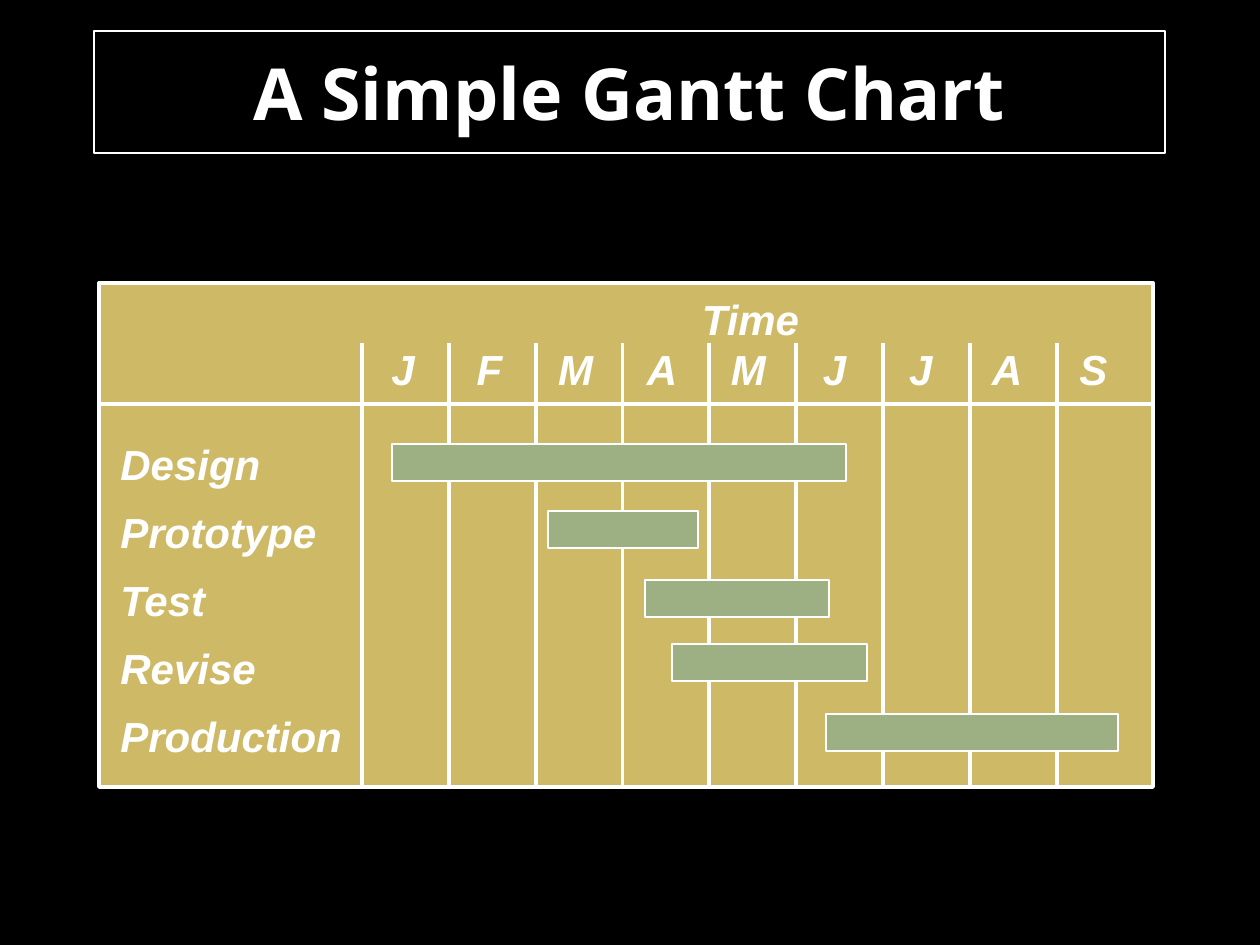
"""Build a slide with a simple Gantt chart of five project phases over nine months."""
from lxml import etree
from pptx import Presentation
from pptx.dml.color import RGBColor
from pptx.enum.shapes import MSO_CONNECTOR, MSO_SHAPE
from pptx.enum.text import MSO_ANCHOR, PP_ALIGN
from pptx.oxml.ns import qn
from pptx.util import Pt

LEFT, CENTER = PP_ALIGN.LEFT, PP_ALIGN.CENTER
MIDDLE = MSO_ANCHOR.MIDDLE
RECT, STRAIGHT = MSO_SHAPE.RECTANGLE, MSO_CONNECTOR.STRAIGHT

BLACK = RGBColor(0x00, 0x00, 0x00)
WHITE = RGBColor(0xFF, 0xFF, 0xFF)
GOLD = RGBColor(0xCE, 0xB9, 0x66)
GREEN = RGBColor(0x9C, 0xB0, 0x84)

TITLE = "A Simple Gantt Chart"
AXIS = "Time"
MONTHS = ["J", "F", "M", "A", "M", "J", "J", "A", "S"]
TASKS = [
    ("Design", 392, 444, 454),
    ("Prototype", 548, 511, 150),
    ("Test", 645, 580, 184),
    ("Revise", 672, 644, 195),
    ("Production", 826, 714, 292),
]
BAR_H = 37

PANEL_X, PANEL_Y, PANEL_W, PANEL_H = 99, 283, 1054, 504
HEADER_Y = 404
GRID_X, GRID_TOP, GRID_BOTTOM, GRID_STEP = 362, 343, 786, 86.85
TAB_X, TAB_STEP = 26, 86.3


def px(n):
    return round(n * 914400 / 126)


def box(x, y, w, h):
    return [px(n) for n in (x, y, w, h)]


def write(p, text, size=24, font="Arial", italic=True, align=LEFT, spacing=None):
    p.alignment = align
    p.line_spacing = spacing
    r = p.add_run()
    r.text = text
    f = r.font
    f.size, f.name, f.bold, f.italic = Pt(size), font, True, italic
    f.color.rgb = WHITE


def outline(sp, width):
    sp.line.color.rgb = WHITE
    sp.line.width = Pt(width)


def add_rect(s, x, y, w, h, fill, width):
    sp = s.shapes.add_shape(RECT, *box(x, y, w, h))
    sp.shadow.inherit = False
    sp.fill.solid()
    sp.fill.fore_color.rgb = fill
    outline(sp, width)


def add_line(s, x1, y1, x2, y2):
    sp = s.shapes.add_connector(STRAIGHT, *box(x1, y1, x2, y2))
    outline(sp, 2.25)
    etree.SubElement(sp._element.spPr, qn("a:effectLst"))


def add_tabs(p):
    tabs = etree.SubElement(p._p.get_or_add_pPr(), qn("a:tabLst"))
    for i in range(len(MONTHS)):
        pos = px(TAB_X + i * TAB_STEP)
        etree.SubElement(tabs, qn("a:tab"), pos=str(pos), algn="ctr")


def add_title(s):
    sp = s.shapes.title
    sp.left, sp.top, sp.width, sp.height = box(94, 31, 1071, 122)
    outline(sp, 0.75)
    tf = sp.text_frame
    tf.vertical_anchor = MIDDLE
    write(tf.paragraphs[0], TITLE, size=41, font="Open Sans", italic=False, align=CENTER)


def add_header(s):
    tf = s.shapes.add_textbox(*box(377, 287, 747, 113)).text_frame
    tf.word_wrap = True
    tf.margin_left = tf.margin_right = 0
    write(tf.paragraphs[0], AXIS, align=CENTER)
    p = tf.add_paragraph()
    write(p, "\t" + "\t".join(MONTHS))
    add_tabs(p)


def add_grid(s):
    for i in range(len(MONTHS)):
        x = GRID_X + i * GRID_STEP
        add_line(s, x, GRID_TOP, x, GRID_BOTTOM)
    add_line(s, PANEL_X, HEADER_Y, PANEL_X + PANEL_W, HEADER_Y)


def add_tasks(s):
    tf = s.shapes.add_textbox(*box(108, 415, 247, 353)).text_frame
    tf.word_wrap = False
    for i, (name, x, y, w) in enumerate(TASKS):
        p = tf.add_paragraph() if i else tf.paragraphs[0]
        write(p, name, spacing=1.35)
        add_rect(s, x, y, w, BAR_H, GREEN, 0.75)


def main():
    prs = Presentation()
    prs.slide_width, prs.slide_height = px(1260), px(945)
    s = prs.slides.add_slide(prs.slide_layouts[5])
    s.background.fill.solid()
    s.background.fill.fore_color.rgb = BLACK
    add_title(s)
    add_rect(s, PANEL_X, PANEL_Y, PANEL_W, PANEL_H, GOLD, 2.25)
    add_header(s)
    add_grid(s)
    add_tasks(s)
    prs.save("out.pptx")


if __name__ == "__main__":
    main()
